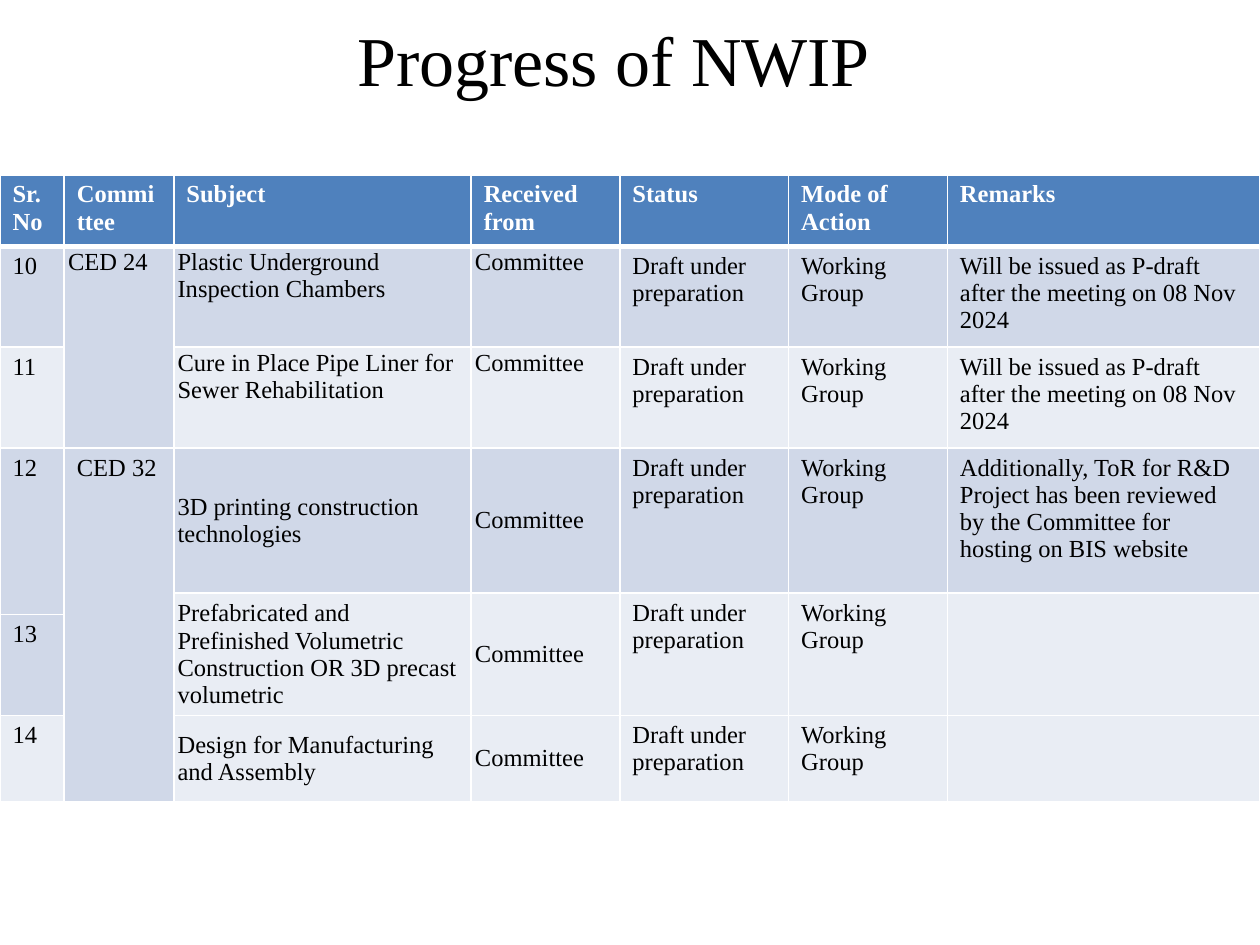
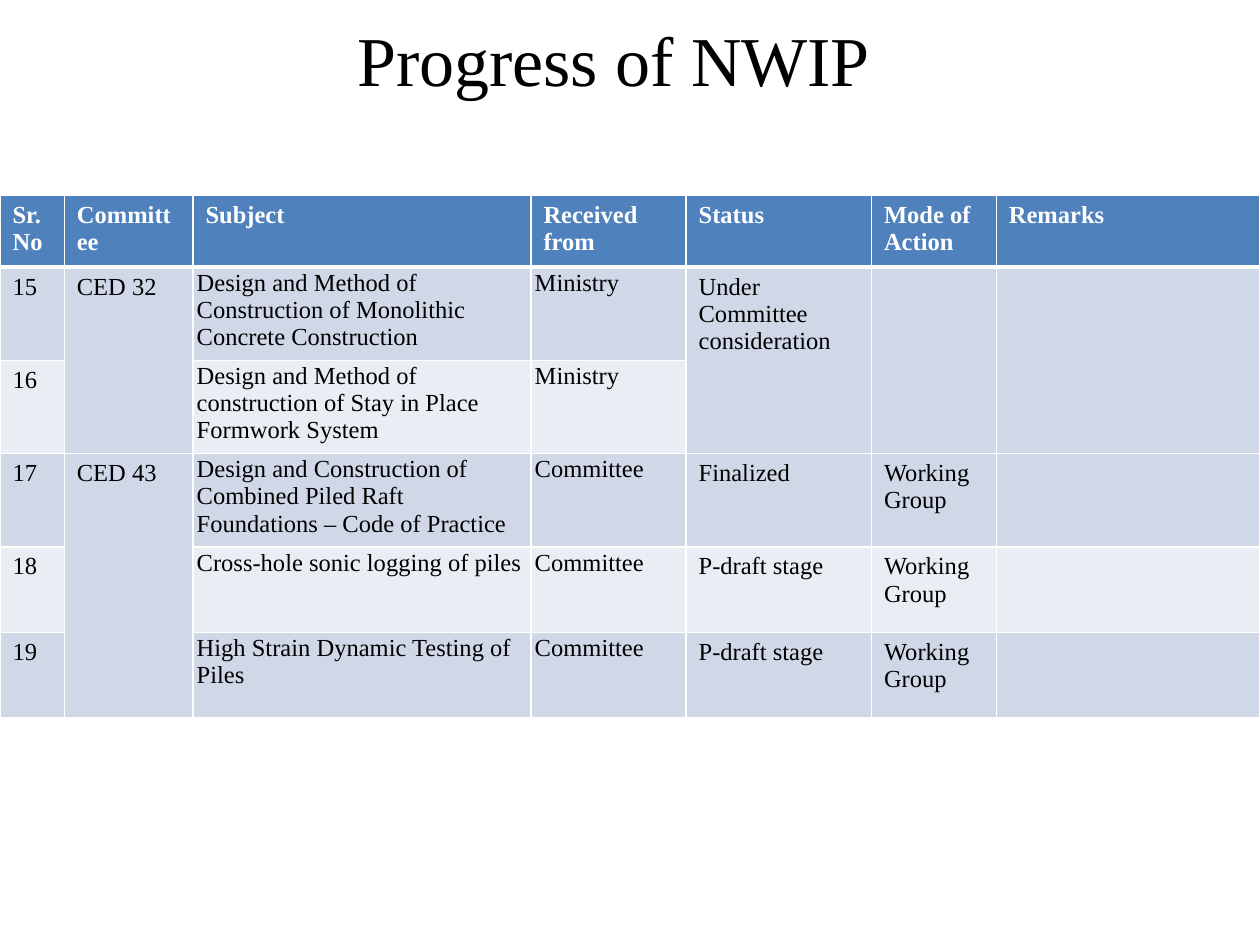
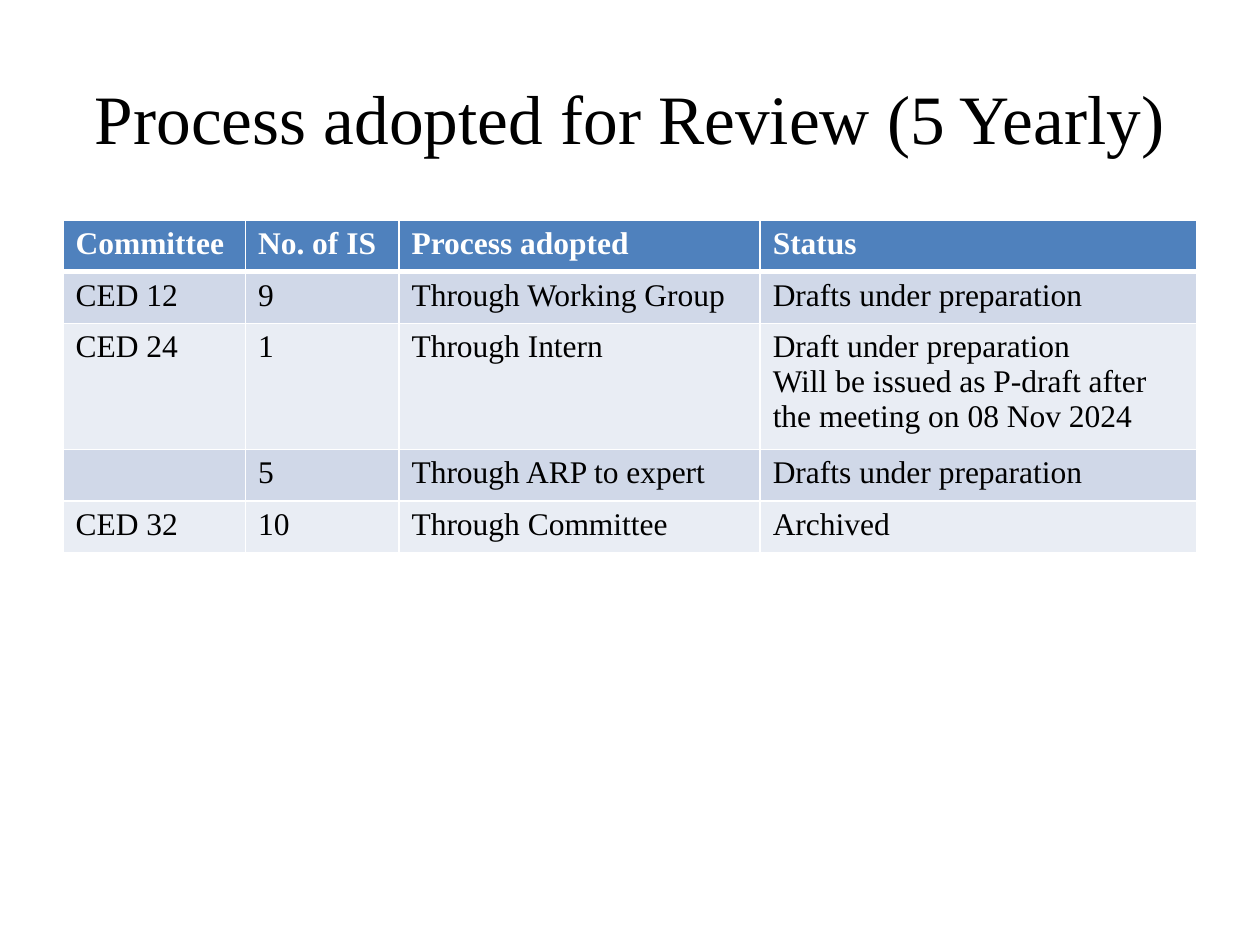
import itertools

import pptx
import pptx.dml.color
import pptx.enum.text
import pptx.oxml.ns
import pptx.util
from lxml import etree

SLIDE_WIDTH = pptx.util.Inches(10)
SLIDE_HEIGHT = pptx.util.Inches(7.5)
FONT = "Times New Roman"
COLOURS = {
    "text": "000000",
    "header": "4F81BD",
    "header text": "FFFFFF",
    "dark band": "D0D8E8",
    "light band": "E9EDF4",
    "rule": "FFFFFF",
}
TOP = pptx.enum.text.MSO_ANCHOR.TOP
MIDDLE = pptx.enum.text.MSO_ANCHOR.MIDDLE
TIGHT_MARGINS = {
    "margin_left": pptx.util.Inches(0.03),
    "margin_right": pptx.util.Inches(0.03),
    "margin_top": pptx.util.Inches(0.02),
    "margin_bottom": pptx.util.Inches(0.02),
}

# Boxes are left, top, width and height as shares of the slide.
NWIP_TITLE_BOX = (0.037, 0, 0.9, 0.123)
NWIP_HEADINGS = ["Sr. No", "Committee", "Subject", "Received from", "Status",
                 "Mode of Action", "Remarks"]
SUBJECT, RECEIVED = 2, 3
DRAFT = "Draft under preparation"
GROUP = "Working Group"
P_DRAFT = "Will be issued as P-draft after the meeting on 08 Nov 2024"

# None continues the cell above; an empty string is an empty cell.
NWIP_FIRST = [
    NWIP_HEADINGS,
    ["10", "CED 24", "Plastic Underground Inspection Chambers", "Committee",
     DRAFT, GROUP, P_DRAFT],
    ["11", None, "Cure in Place Pipe Liner for Sewer Rehabilitation", "Committee",
     DRAFT, GROUP, P_DRAFT],
    ["12", "CED 32", "3D printing construction technologies", "Committee", DRAFT, GROUP,
     "Additionally, ToR for R&D Project has been reviewed by the Committee "
     "for hosting on BIS website"],
    [None, None, "Prefabricated and Prefinished Volumetric Construction "
     "OR 3D precast volumetric", "Committee", DRAFT, GROUP, ""],
    ["13"] + [None] * 6,
    ["14", None, "Design for Manufacturing and Assembly", "Committee", DRAFT, GROUP, ""],
]
NWIP_SECOND = [
    NWIP_HEADINGS,
    ["15", "CED 32", "Design and Method of Construction of Monolithic Concrete Construction",
     "Ministry", "Under Committee consideration", "", ""],
    ["16", None, "Design and Method of construction of Stay in Place Formwork System",
     "Ministry", None, None, None],
    ["17", "CED 43", "Design and Construction of Combined Piled Raft Foundations "
     "– Code of Practice", "Committee", "Finalized", GROUP, ""],
    ["18", None, "Cross-hole sonic logging of piles", "Committee", "P-draft stage", GROUP, ""],
    ["19", None, "High Strain Dynamic Testing of Piles", "Committee", "P-draft stage",
     GROUP, ""],
]
REVIEW = [
    ["Committee", "No. of IS", "Process adopted", "Status"],
    ["CED 12", "9", "Through Working Group", "Drafts under preparation"],
    ["CED 24", "1", "Through Intern", DRAFT + "\n" + P_DRAFT],
    ["", "5", "Through ARP to expert", "Drafts under preparation"],
    ["CED 32", "10", "Through Committee", "Archived"],
]


def rgb(name):
    return pptx.dml.color.RGBColor.from_string(COLOURS[name])


def set_values(target, values):
    for name, value in values.items():
        setattr(target, name, value)


def place(box):
    """Turn shares of the slide into lengths."""
    sides = (SLIDE_WIDTH, SLIDE_HEIGHT) * 2
    return [int(share * side) for share, side in zip(box, sides)]


def split(total, weights):
    return [int(total * weight / sum(weights)) for weight in weights]


def write_text(frame, text, size, colour="text", bold=False, align=None):
    frame.text = text
    for para in frame.paragraphs:
        para.alignment = align
        for span in para.runs:
            set_values(span.font, {"name": FONT, "size": pptx.util.Pt(size), "bold": bold})
            span.font.color.rgb = rgb(colour)


def add_title(page, box, text, size):
    frame = page.shapes.add_textbox(*place(box)).text_frame
    set_values(frame, {"word_wrap": True, "vertical_anchor": MIDDLE})
    write_text(frame, text, size, align=pptx.enum.text.PP_ALIGN.CENTER)


def add_borders(cell, widths):
    properties = cell._tc.get_or_add_tcPr()
    for side, width in widths.items():
        line = etree.SubElement(properties, pptx.oxml.ns.qn("a:ln" + side),
                                w=str(pptx.util.Pt(width)))
        fill = etree.SubElement(line, pptx.oxml.ns.qn("a:solidFill"))
        etree.SubElement(fill, pptx.oxml.ns.qn("a:srgbClr"), val=COLOURS["rule"])


def format_cell(cell, row):
    add_borders(cell, {"L": 1, "R": 1, "T": 3 if row == 1 else 1, "B": 3 if row == 0 else 1})
    band = "header" if row == 0 else "dark band" if row % 2 else "light band"
    cell.fill.solid()
    cell.fill.fore_color.rgb = rgb(band)


def add_grid(page, box, rows, column_weights, row_weights, size):
    """Add a banded table whose cells reach down over the None entries below them."""
    left, top, width, height = place(box)
    table = page.shapes.add_table(len(rows), len(rows[0]), left, top, width, height).table
    table.horz_banding = False
    for column, length in zip(table.columns, split(width, column_weights)):
        column.width = length
    for line, length in zip(table.rows, split(height, row_weights)):
        line.height = length
    for row, texts in enumerate(rows):
        for column, text in enumerate(texts):
            cell = table.cell(row, column)
            format_cell(cell, row)
            if text is None:
                continue
            below = (other[column] for other in rows[row + 1:])
            covered = len(list(itertools.takewhile(lambda value: value is None, below)))
            if covered:
                cell.merge(table.cell(row + covered, column))
            if text:
                write_text(cell.text_frame, text, size,
                           "text" if row else "header text", row == 0)
    return table


def tighten(cells, anchor=TOP):
    for cell in cells:
        set_values(cell, {**TIGHT_MARGINS, "vertical_anchor": anchor})


def add_nwip_page(page, box, rows, column_weights, row_weights, middle_from):
    """Add a progress page; subject and source are centred from row middle_from on."""
    add_title(page, NWIP_TITLE_BOX, "Progress of NWIP", 40)
    table = add_grid(page, box, rows, column_weights, row_weights, 14)
    for row in range(1, len(rows)):
        tighten([table.cell(row, SUBJECT), table.cell(row, RECEIVED)],
                MIDDLE if row >= middle_from else TOP)
    return table


def add_review_page(page):
    add_title(page, (0.05, 0.04, 0.9, 0.167), "Process adopted for Review (5 Yearly)", 39.6)
    add_grid(page, (0.05, 0.233, 0.9, 0.273), REVIEW, [1.45, 1.22, 2.87, 3.47],
             [1] * len(REVIEW), 18)


def main():
    deck = pptx.Presentation()
    set_values(deck, {"slide_width": SLIDE_WIDTH, "slide_height": SLIDE_HEIGHT})
    blank = deck.slide_layouts[6]
    first, second, review = [deck.slides.add_slide(blank) for _ in range(3)]

    table = add_nwip_page(first, (0, 0.185, 1, 0.58), NWIP_FIRST,
                          [0.51, 0.87, 2.36, 1.18, 1.34, 1.26, 2.48],
                          [0.39, 0.64, 0.64, 1.15, 0.17, 0.68, 0.68], middle_from=3)
    tighten([table.cell(1, 1)])
    add_nwip_page(second, (0, 0.207, 1, 0.5), NWIP_SECOND,
                  [0.51, 1.02, 2.68, 1.23, 1.47, 0.99, 2.09],
                  [0.39, 0.64] + [0.68] * 4, middle_from=len(NWIP_SECOND))
    add_review_page(review)
    deck.save("out.pptx")


if __name__ == "__main__":
    main()
